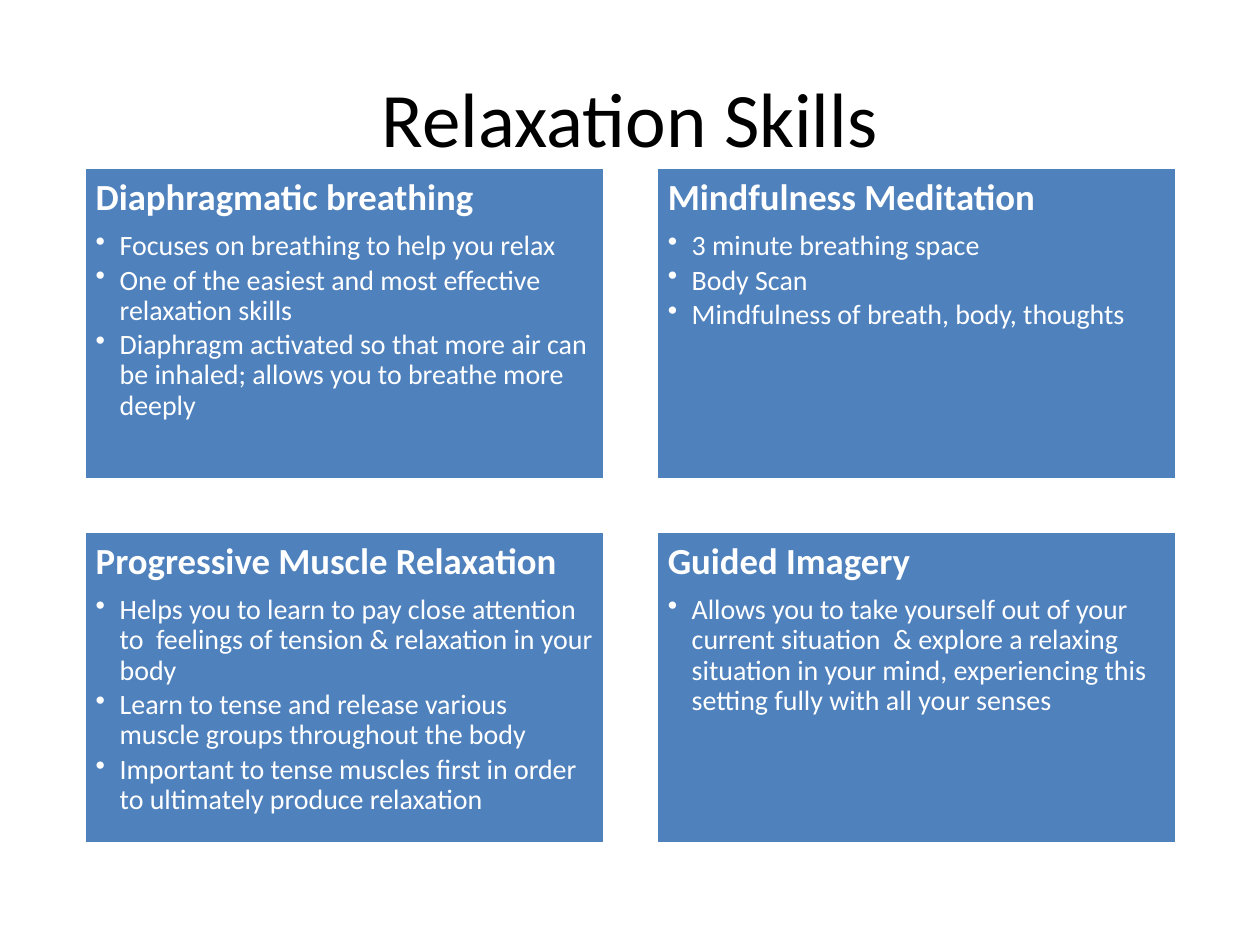
"""Build the Relaxation Skills slide: a title above a two-by-two grid of skill cards."""
from dataclasses import dataclass

from lxml.etree import SubElement
from pptx import Presentation
from pptx.dml.color import RGBColor
from pptx.enum.shapes import MSO_SHAPE
from pptx.enum.text import MSO_ANCHOR, PP_ALIGN
from pptx.oxml.ns import qn
from pptx.util import Inches, Pt

FONT = "Calibri"
WHITE, BLUE, BLACK = "FFFFFF", "4F81BD", "000000"
GRID_LEFT, GRID_TOP = 0.67, 1.33
CARD_WIDTH, CARD_HEIGHT = 4.13, 2.48
GAP = 0.41
COLUMNS = 2
INSET, INDENT = 0.09, 0.19


@dataclass(frozen=True)
class Skill:
    heading: str
    points: tuple[str, ...]


SKILLS = (
    Skill("Diaphragmatic breathing", (
        "Focuses on breathing to help you relax",
        "One of the easiest and most effective relaxation skills",
        "Diaphragm activated so that more air can be inhaled; allows you to breathe more deeply",
    )),
    Skill("Mindfulness Meditation", (
        "3 minute breathing space",
        "Body Scan",
        "Mindfulness of breath, body, thoughts",
    )),
    Skill("Progressive Muscle Relaxation", (
        "Helps you to learn to pay close attention to  feelings of tension & relaxation in your body",
        "Learn to tense and release various muscle groups throughout the body",
        "Important to tense muscles first in order to ultimately produce relaxation",
    )),
    Skill("Guided Imagery", (
        "Allows you to take yourself out of your current situation  & explore a relaxing "
        "situation in your mind, experiencing this setting fully with all your senses",
    )),
)


def color(value: str) -> RGBColor:
    return RGBColor.from_string(value)


def style(paragraph, size: float, value: str, align, bold: bool = False) -> None:
    paragraph.alignment = align
    font = paragraph.font
    font.name, font.size, font.bold = FONT, Pt(size), bold
    font.color.rgb = color(value)


def add_bullet(paragraph) -> None:
    properties = paragraph._p.get_or_add_pPr()
    properties.set("marL", str(Inches(INDENT)))
    properties.set("indent", str(-Inches(INDENT)))
    bullet = SubElement(properties, qn("a:buChar"))
    bullet.set("char", "•")
    properties.remove(bullet)
    properties.insert_element_before(bullet, "a:tabLst", "a:defRPr", "a:extLst")


def add_card(slide, skill: Skill, column: int, row: int) -> None:
    card = slide.shapes.add_shape(
        MSO_SHAPE.RECTANGLE,
        Inches(GRID_LEFT + column * (CARD_WIDTH + GAP)),
        Inches(GRID_TOP + row * (CARD_HEIGHT + GAP)),
        Inches(CARD_WIDTH), Inches(CARD_HEIGHT),
    )
    card.shadow.inherit = False
    card.fill.solid()
    card.fill.fore_color.rgb = color(BLUE)
    card.line.color.rgb = color(WHITE)
    card.line.width = Pt(2)

    frame = card.text_frame
    frame.word_wrap = True
    frame.vertical_anchor = MSO_ANCHOR.TOP
    frame.margin_left = frame.margin_right = Inches(INSET)
    frame.margin_top = frame.margin_bottom = Inches(INSET)

    heading = frame.paragraphs[0]
    heading.text = skill.heading
    style(heading, 21, WHITE, PP_ALIGN.LEFT, bold=True)
    heading.line_spacing, heading.space_after = 0.9, Pt(7.35)
    for text in skill.points:
        point = frame.add_paragraph()
        point.text, point.level = text, 1
        style(point, 16, WHITE, PP_ALIGN.LEFT)
        point.line_spacing, point.space_after = 0.9, Pt(2.4)
        add_bullet(point)


def set_title(slide, text: str) -> None:
    title = slide.shapes.title
    title.left, title.top = Inches(0.5), Inches(0.3)
    title.width, title.height = Inches(9), Inches(1.25)
    title.text_frame.text = text
    title.text_frame.vertical_anchor = MSO_ANCHOR.MIDDLE
    style(title.text_frame.paragraphs[0], 44, BLACK, PP_ALIGN.CENTER)


def main() -> None:
    presentation = Presentation()
    presentation.slide_width, presentation.slide_height = Inches(10), Inches(7.5)
    slide = presentation.slides.add_slide(presentation.slide_layouts[5])
    set_title(slide, "Relaxation Skills")
    for index, skill in enumerate(SKILLS):
        row, column = divmod(index, COLUMNS)
        add_card(slide, skill, column, row)
    presentation.save("out.pptx")


if __name__ == "__main__":
    main()
